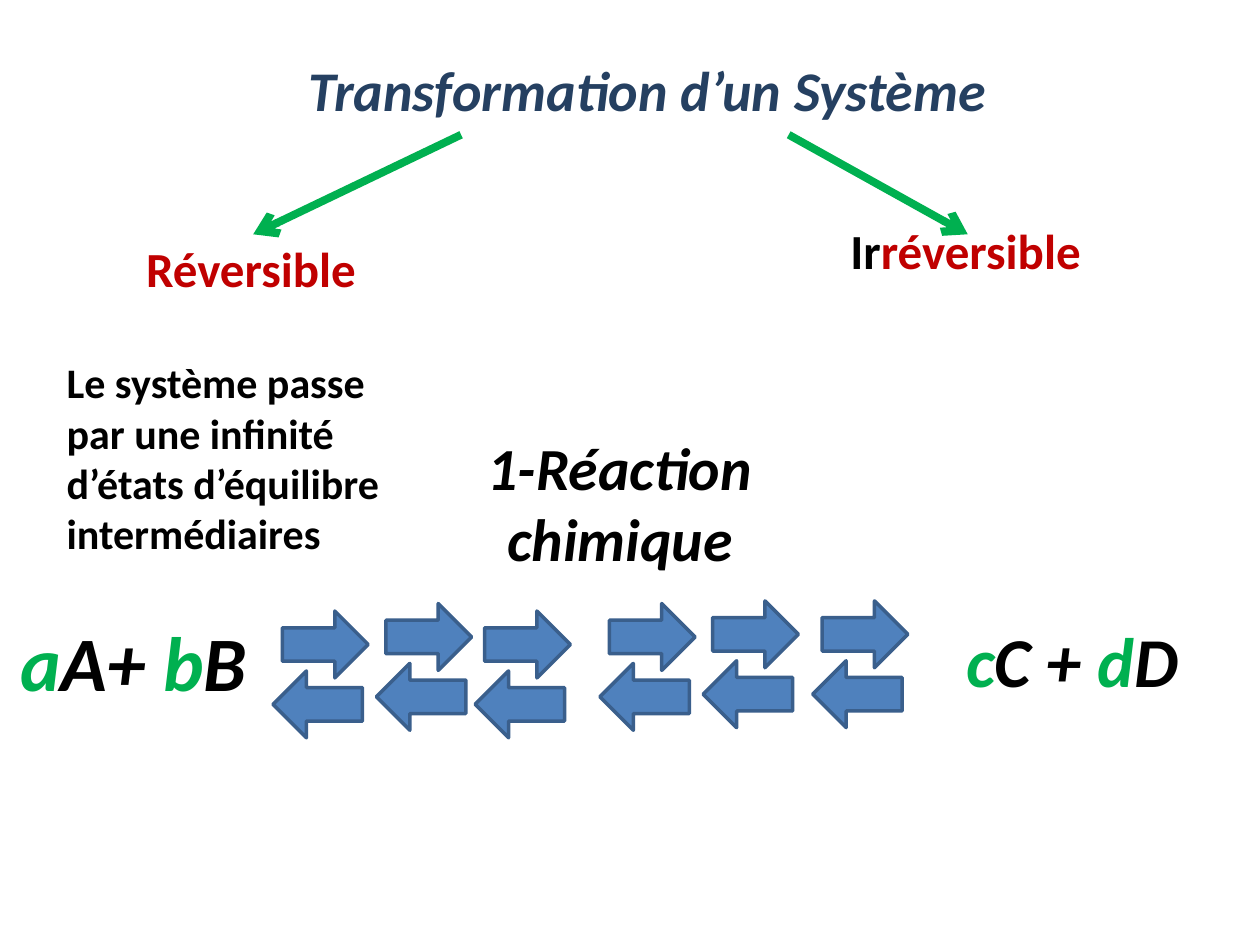
from lxml import etree
from pptx import Presentation
from pptx.dml.color import RGBColor
from pptx.enum.shapes import MSO_CONNECTOR, MSO_SHAPE
from pptx.enum.text import MSO_ANCHOR, PP_ALIGN
from pptx.oxml.ns import qn
from pptx.util import Pt

STRAIGHT = MSO_CONNECTOR.STRAIGHT
RIGHT_ARROW, LEFT_ARROW = MSO_SHAPE.RIGHT_ARROW, MSO_SHAPE.LEFT_ARROW
TOP, MIDDLE = MSO_ANCHOR.TOP, MSO_ANCHOR.MIDDLE
LEFT, CENTER = PP_ALIGN.LEFT, PP_ALIGN.CENTER

BLACK = RGBColor(0x00, 0x00, 0x00)
NAVY = RGBColor(0x25, 0x40, 0x61)
RED = RGBColor(0xC0, 0x00, 0x00)
GREEN = RGBColor(0x00, 0xB0, 0x50)
BLUE = RGBColor(0x4F, 0x81, 0xBD)
DARK_BLUE = RGBColor(0x3A, 0x5F, 0x8C)


def add_text(slide, box, runs, size, italic=False, align=LEFT, anchor=MIDDLE, **margins):
    """Place one paragraph of bold (text, colour) runs in box."""
    shape = slide.shapes.add_textbox(*map(Pt, box))
    frame = shape.text_frame
    frame.word_wrap = True
    frame.vertical_anchor = anchor
    for name, value in margins.items():
        setattr(frame, name, Pt(value))
    paragraph = frame.paragraphs[0]
    paragraph.alignment = align
    font_format = {"name": "Calibri", "size": Pt(size), "bold": True, "italic": italic}
    for text, colour in runs:
        run = paragraph.add_run()
        run.text = text
        for name, value in font_format.items():
            setattr(run.font, name, value)
        run.font.color.rgb = colour


def add_branch(slide, start, end):
    """Draw a green arrow from the heading to one kind of transformation."""
    connector = slide.shapes.add_connector(STRAIGHT, *map(Pt, start + end))
    connector.line.color.rgb = GREEN
    connector.line.width = Pt(4.5)
    line = connector.line._get_or_add_ln()
    etree.SubElement(line, qn("a:tailEnd"), type="arrow")
    etree.SubElement(connector._element.spPr, qn("a:effectLst"))


def add_heading(slide, box):
    left, top, width, height = box
    add_text(slide, (left, top, width, height), [("Transformation d’un Système", NAVY)],
             32, italic=True, align=CENTER, margin_left=14.4)
    branch_top, branch_bottom = top + 45.3, top + 102.2
    add_branch(slide, (left + 107.3, branch_top), (left - 11.5, branch_bottom))
    add_branch(slide, (left + 294.5, branch_top), (left + 396.8, branch_bottom))


def add_kinds(slide, box):
    left, top, width, height = box
    add_text(slide, (left + 45.4, top + 5.8, 158.4, 49.7), [("Réversible", RED)], 28)
    add_text(slide, (left + width - 191.5, top, 191.5, height),
             [("Ir", BLACK), ("réversible", RED)], 28, anchor=TOP)
    add_text(slide, (left, top + 69.1, 216, 169.2),
             [("Le système passe par une infinité d’états d’équilibre intermédiaires", BLACK)],
             24, margin_bottom=32.9)


def add_arrow_pair(slide, left, top):
    """Draw a forward arrow above a backward one, set slightly to its left."""
    width, height = 49, 38.2
    for kind, x, y, arrow_width in (
        (RIGHT_ARROW, left + 5.4, top, width),
        (LEFT_ARROW, left, top + 34.2, width + 2.1),
    ):
        shape = slide.shapes.add_shape(kind, Pt(x), Pt(y), Pt(arrow_width), Pt(height))
        shape.shadow.inherit = False
        shape.fill.solid()
        shape.fill.fore_color.rgb = BLUE
        shape.line.color.rgb = DARK_BLUE
        shape.line.width = Pt(2)


def add_reaction(slide, box):
    left, top, width, height = box
    add_text(slide, (left + 277.9, top, 169.9, 78.5), [("1-Réaction chimique", BLACK)],
             34.1, italic=True, align=CENTER)
    add_text(slide, (left, top + height - 78.5, 169.9, 78.5),
             [("a", GREEN), ("A+ ", BLACK), ("b", GREEN), ("B", BLACK)],
             44, italic=True, align=CENTER)
    add_text(slide, (left + width - 150.5, top + 101.5, 150.5, 55.4),
             [("c", GREEN), ("C + ", BLACK), ("d", GREEN), ("D", BLACK)],
             40, italic=True, anchor=TOP, margin_left=16.2)
    pair_offsets = ((164.6, 5.8), (223.7, 1.5), (280.1, 5.8),
                    (351.4, 1.5), (410.4, 0), (473, 0))
    for x, y in pair_offsets:
        add_arrow_pair(slide, left + x, top + 95.7 + y)


def main():
    presentation = Presentation()
    presentation.slide_width, presentation.slide_height = Pt(720), Pt(540)
    slide = presentation.slides.add_slide(presentation.slide_layouts[6])
    add_heading(slide, (156.2, 31.7, 420.5, 38.9))
    add_kinds(slide, (31, 122.4, 639.4, 211))
    add_reaction(slide, (-8.6, 247.7, 694.9, 169.2))
    presentation.save("out.pptx")


if __name__ == "__main__":
    main()
